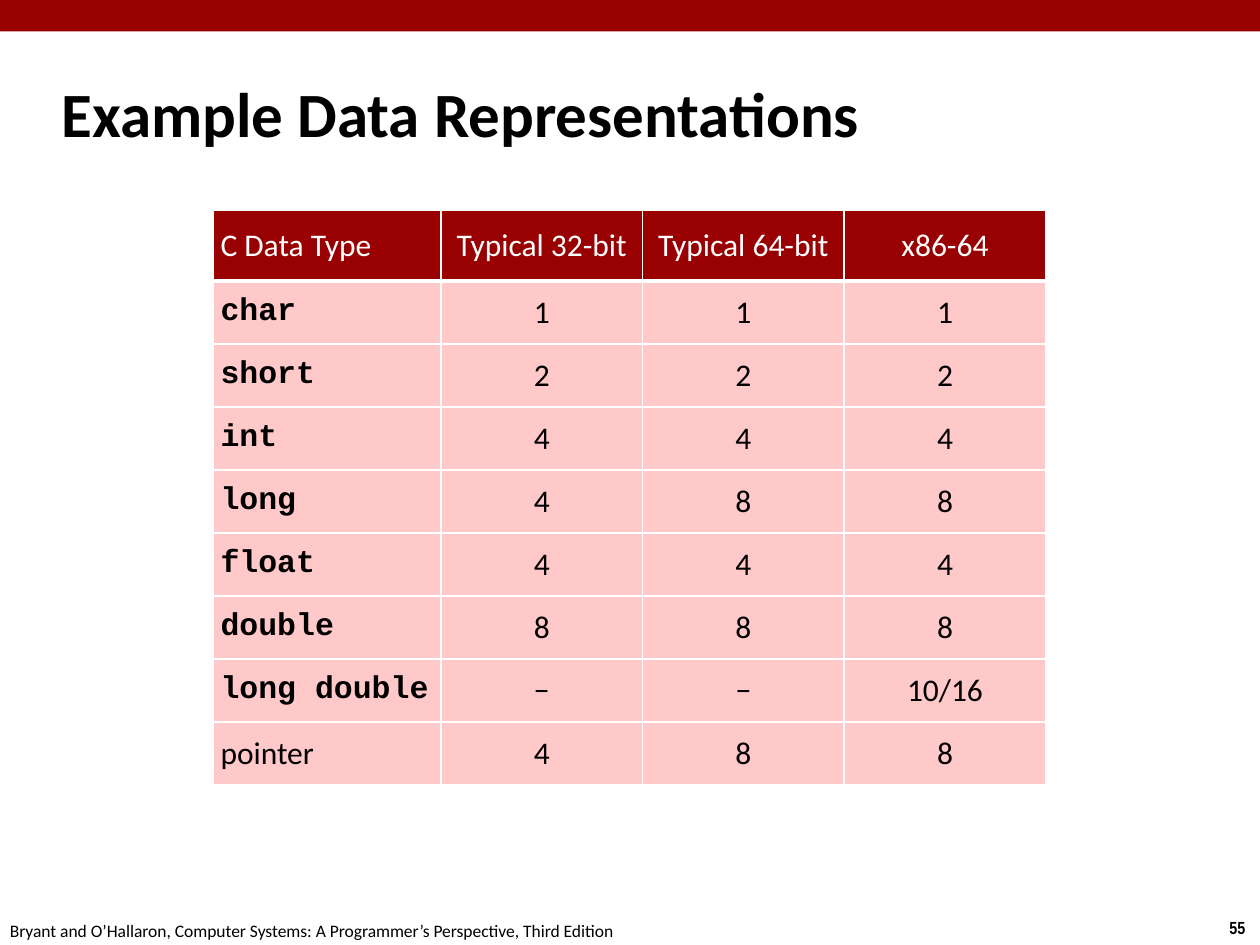
from dataclasses import dataclass

from lxml import etree
from pptx import Presentation
from pptx import util as u
from pptx.dml.color import RGBColor
from pptx.enum import shapes, text
from pptx.oxml import ns


@dataclass(frozen=True)
class Theme:
    banner: str = "990000"
    header: str = "980002"
    body: str = "FFC8C9"
    ink: str = "000000"
    paper: str = "FFFFFF"
    sans: str = "Calibri"
    narrow: str = "Arial Narrow"
    code: str = "Courier New"
    title_size: int = 36
    table_size: int = 18
    footer_size: int = 10
    rule: int = 1
    header_rule: int = 3


THEME = Theme()

HEADINGS = ("C Data Type", "Typical 32-bit", "Typical 64-bit", "x86-64")
TYPE_SIZES = (
    ("char", "1", "1", "1"),
    ("short", "2", "2", "2"),
    ("int", "4", "4", "4"),
    ("long", "4", "8", "8"),
    ("float", "4", "4", "4"),
    ("double", "8", "8", "8"),
    ("long double", "−", "−", "10/16"),
    ("pointer", "4", "8", "8"),
)


def write_text(frame, words, size, font=THEME.sans, color=THEME.ink,
               bold=False, align=text.PP_ALIGN.LEFT):
    paragraph = frame.paragraphs[0]
    paragraph.alignment = align
    run = paragraph.add_run()
    run.text = words
    run.font.size = u.Pt(size)
    run.font.name = font
    run.font.bold = bold
    run.font.color.rgb = RGBColor.from_string(color)


def add_banner(slide, width):
    banner = slide.shapes.add_shape(
        shapes.MSO_SHAPE.RECTANGLE, 0, 0, width, u.Inches(0.25))
    banner.shadow.inherit = False
    banner.fill.solid()
    banner.fill.fore_color.rgb = RGBColor.from_string(THEME.banner)
    banner.line.fill.background()


def add_label(slide, box, words, size, wrap=False,
              anchor=text.MSO_ANCHOR.TOP, **style):
    label = slide.shapes.add_textbox(*map(u.Inches, box))
    label.text_frame.word_wrap = wrap
    label.text_frame.vertical_anchor = anchor
    write_text(label.text_frame, words, size, **style)


def set_borders(cell, top, bottom):
    properties = cell._tc.get_or_add_tcPr()
    widths = (("lnL", THEME.rule), ("lnR", THEME.rule),
              ("lnT", top), ("lnB", bottom))
    for position, (side, width) in enumerate(widths):
        border = etree.Element(ns.qn("a:" + side), w=str(u.Pt(width)))
        fill = etree.SubElement(border, ns.qn("a:solidFill"))
        etree.SubElement(fill, ns.qn("a:srgbClr"), val=THEME.paper)
        properties.insert(position, border)


def format_cell(cell, fill):
    cell.fill.solid()
    cell.fill.fore_color.rgb = RGBColor.from_string(fill)
    cell.vertical_anchor = text.MSO_ANCHOR.MIDDLE
    cell.margin_left = cell.margin_right = u.Inches(0.06)
    cell.margin_top = cell.margin_bottom = u.Inches(0.06)


def add_size_table(slide):
    rows = (HEADINGS,) + TYPE_SIZES
    table = slide.shapes.add_table(
        len(rows), len(HEADINGS), u.Inches(1.69), u.Inches(1.67),
        u.Inches(6.61), u.Inches(4.56)).table
    for index, column in enumerate(table.columns):
        column.width = u.Inches(1.6 if index else 1.81)
    for index, row in enumerate(table.rows):
        row.height = u.Inches(0.5 if index else 0.56)

    for r, values in enumerate(rows):
        is_header = r == 0
        for c, value in enumerate(values):
            cell = table.cell(r, c)
            is_code = c == 0 and not is_header and value != "pointer"
            format_cell(cell, THEME.header if is_header else THEME.body)
            set_borders(cell,
                        top=THEME.header_rule if r == 1 else THEME.rule,
                        bottom=THEME.header_rule if is_header else THEME.rule)
            write_text(cell.text_frame, value, THEME.table_size,
                       font=THEME.code if is_code else THEME.sans,
                       color=THEME.paper if is_header else THEME.ink,
                       bold=is_code,
                       align=text.PP_ALIGN.CENTER if c else text.PP_ALIGN.LEFT)


def main():
    deck = Presentation()
    deck.slide_width, deck.slide_height = u.Inches(10), u.Inches(7.5)
    slide = deck.slides.add_slide(deck.slide_layouts[6])
    add_banner(slide, deck.slide_width)
    add_label(slide, (9.66, 7.23, 0.34, 0.27), "55", THEME.footer_size,
              font=THEME.narrow, bold=True)
    add_label(slide, (-0.02, 7.25, 5.08, 0.27),
              "Bryant and O’Hallaron, Computer Systems: "
              "A Programmer’s Perspective, Third Edition", THEME.footer_size)
    add_label(slide, (0.39, 0.48, 8.3, 0.83), "Example Data Representations",
              THEME.title_size, wrap=True, anchor=text.MSO_ANCHOR.MIDDLE,
              bold=True)
    add_size_table(slide)
    deck.save("out.pptx")


if __name__ == "__main__":
    main()
